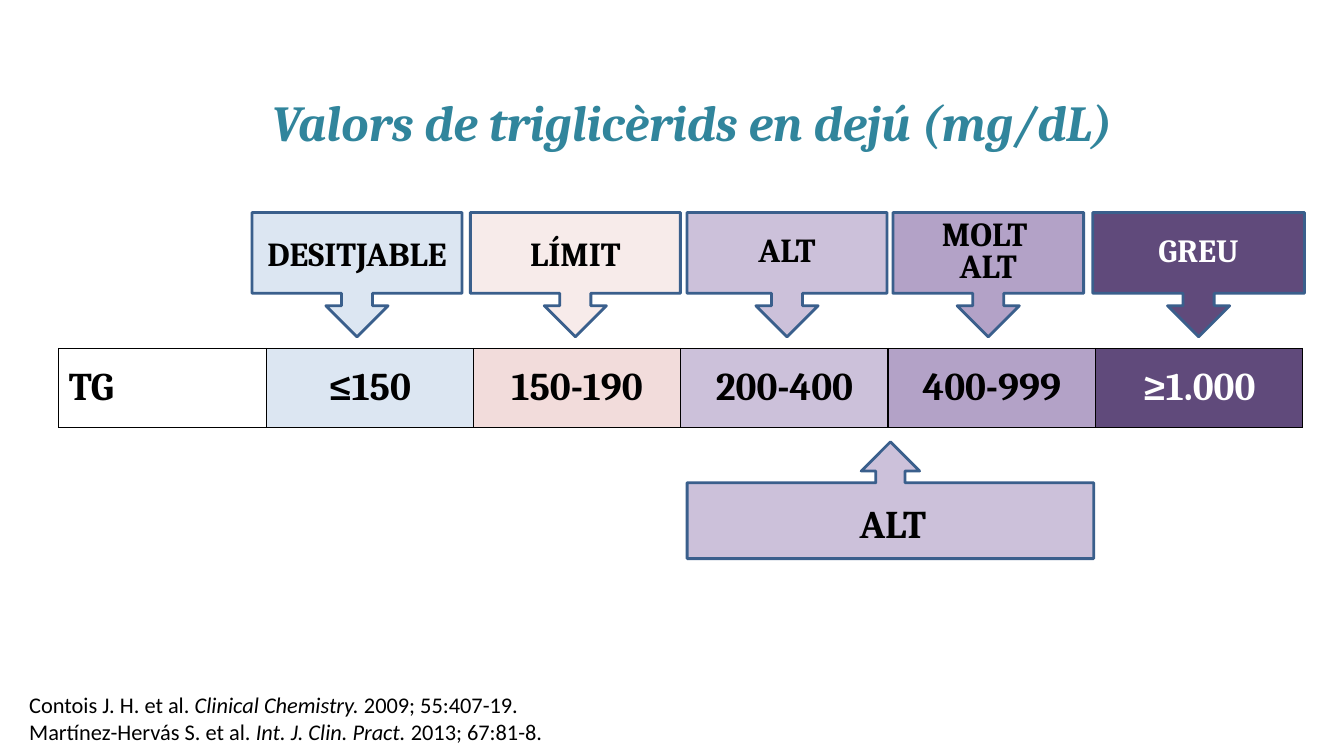
from dataclasses import dataclass

from lxml.etree import SubElement
from pptx import Presentation
from pptx.dml.color import RGBColor
from pptx.enum.shapes import MSO_SHAPE
from pptx.enum.text import MSO_ANCHOR, PP_ALIGN
from pptx.oxml.ns import qn
from pptx.util import Emu, Inches, Pt

COLORS = {
    "black": "000000", "white": "FFFFFF", "title": "31859C", "outline": "3A5F8C",
    "blue": "DCE6F2", "rose": "F2DCDB", "lilac": "CCC1DA",
    "violet": "B3A2C7", "plum": "604A7B",
}
COLS, ROWS = 160, 90  # slide grid of square cells
CALLOUT_TOP, CALLOUT_ROWS = 25.3, 14.8

prs = Presentation()
prs.slide_width, prs.slide_height = Inches(13.333), Inches(7.5)
slide = prs.slides.add_slide(prs.slide_layouts[6])


@dataclass
class Box:
    col: float
    row: float
    cols: float
    rows: float

    def emu(self) -> tuple[Emu, Emu, Emu, Emu]:
        w, h = prs.slide_width / COLS, prs.slide_height / ROWS
        return (Emu(round(self.col * w)), Emu(round(self.row * h)),
                Emu(round(self.cols * w)), Emu(round(self.rows * h)))


@dataclass
class Level:
    """A triglyceride level: its callout above the table."""
    label: str
    col: float
    cols: float
    fill: str
    size: float = 24
    ink: str = "black"
    spacing: float = 0.8
    opacity: int = 100


@dataclass
class Value:
    text: str
    fill: str
    ink: str = "black"
    align: PP_ALIGN = PP_ALIGN.CENTER


LEVELS = [
    Level("DESITJABLE", 30, 25, "blue", spacing=1.0),
    Level("LÍMIT", 56, 25, "rose", spacing=1.0, opacity=56),
    Level("ALT", 81.8, 23.8, "lilac"),
    Level("MOLT \nALT", 106.3, 22.7, "violet"),
    Level("GREU", 130.1, 25.2, "plum", size=23.1, ink="white"),
]
VALUES = [
    Value("TG", "white", align=PP_ALIGN.LEFT),
    Value("≤150", "blue"),
    Value("150-190", "rose"),
    Value("200-400", "lilac"),
    Value("400-999", "violet"),
    Value("≥1.000", "plum", "white"),
]
REFERENCES = [
    ("Contois J. H. et al. ", "Clinical Chemistry. ", "2009; 55:407-19."),
    ("Martínez-Hervás S. et al. ", "Int. J. Clin. Pract. ", "2013; 67:81-8."),
]


def rgb(name: str) -> RGBColor:
    return RGBColor.from_string(COLORS[name])


def style_run(r, size: float, ink: str, font: str = "Cambria",
              bold: bool = True, italic: bool = False) -> None:
    r.font.name, r.font.size = font, Pt(size)
    r.font.bold, r.font.italic = bold, italic
    r.font.color.rgb = rgb(ink)


def write(tf, text: str, size: float, ink: str, align: PP_ALIGN = PP_ALIGN.CENTER,
          spacing: float = 1.0, italic: bool = False) -> None:
    tf.text = text
    tf.word_wrap = True
    for p in tf.paragraphs:
        p.alignment, p.line_spacing = align, spacing
        for r in p.runs:
            style_run(r, size, ink, italic=italic)


def add_callout(box: Box, fill: str, opacity: int = 100):
    sp = slide.shapes.add_shape(MSO_SHAPE.DOWN_ARROW_CALLOUT, *box.emu())
    sp.shadow.inherit = False
    sp.fill.solid()
    sp.fill.fore_color.rgb = rgb(fill)
    if opacity < 100:
        color = sp.fill._xPr.find(qn("a:solidFill"))[0]
        SubElement(color, qn("a:alpha"), val=str(opacity * 1000))
    sp.line.color.rgb = rgb("outline")
    sp.line.width = Pt(2)
    return sp


def add_text(box: Box):
    tf = slide.shapes.add_textbox(*box.emu()).text_frame
    tf.word_wrap = True
    return tf


def set_borders(cell) -> None:
    tcPr = cell._tc.get_or_add_tcPr()
    for i, side in enumerate(("lnL", "lnR", "lnT", "lnB")):
        ln = SubElement(tcPr, qn(f"a:{side}"), w=str(Pt(1)))
        tcPr.insert(i, ln)
        SubElement(SubElement(ln, qn("a:solidFill")), qn("a:srgbClr"),
                   val=COLORS["black"])


def add_values(box: Box) -> None:
    shape = slide.shapes.add_table(1, len(VALUES), *box.emu())
    for column, cell, value in zip(shape.table.columns, shape.table.rows[0].cells, VALUES):
        column.width = Emu(shape.width // len(VALUES))
        cell.vertical_anchor = MSO_ANCHOR.MIDDLE
        cell.fill.solid()
        cell.fill.fore_color.rgb = rgb(value.fill)
        set_borders(cell)
        write(cell.text_frame, value.text, 28, value.ink, value.align)
        p = cell.text_frame.paragraphs[0]
        p.space_before = p.space_after = Pt(6)


def add_references(box: Box) -> None:
    tf = add_text(box)
    tf.text = "\n".join("" for _ in REFERENCES)
    for p, parts in zip(tf.paragraphs, REFERENCES):
        for i, part in enumerate(parts):
            r = p.add_run()
            r.text = part
            style_run(r, 16, "black", "Calibri", bold=False, italic=i == 1)


title = add_text(Box(9.4, 11, 146, 7.8))
title.vertical_anchor = MSO_ANCHOR.MIDDLE
write(title, "Valors de triglicèrids en dejú (mg/dL)", 36, "title",
      spacing=0.9, italic=True)

for level in LEVELS:
    sp = add_callout(Box(level.col, CALLOUT_TOP, level.cols, CALLOUT_ROWS),
                     level.fill, level.opacity)
    sp.text_frame.vertical_anchor = MSO_ANCHOR.MIDDLE
    write(sp.text_frame, level.label, level.size, level.ink, spacing=level.spacing)

add_values(Box(7, 41.5, 148.1, 9.4))

add_callout(Box(81.8, 52.6, 48.4, 13.9), "lilac").rotation = 180
write(add_text(Box(93.8, 58.9, 25, 6.8)), "ALT", 28, "black")

add_references(Box(2.3, 81.7, 83.2, 7.7))

prs.save("out.pptx")
